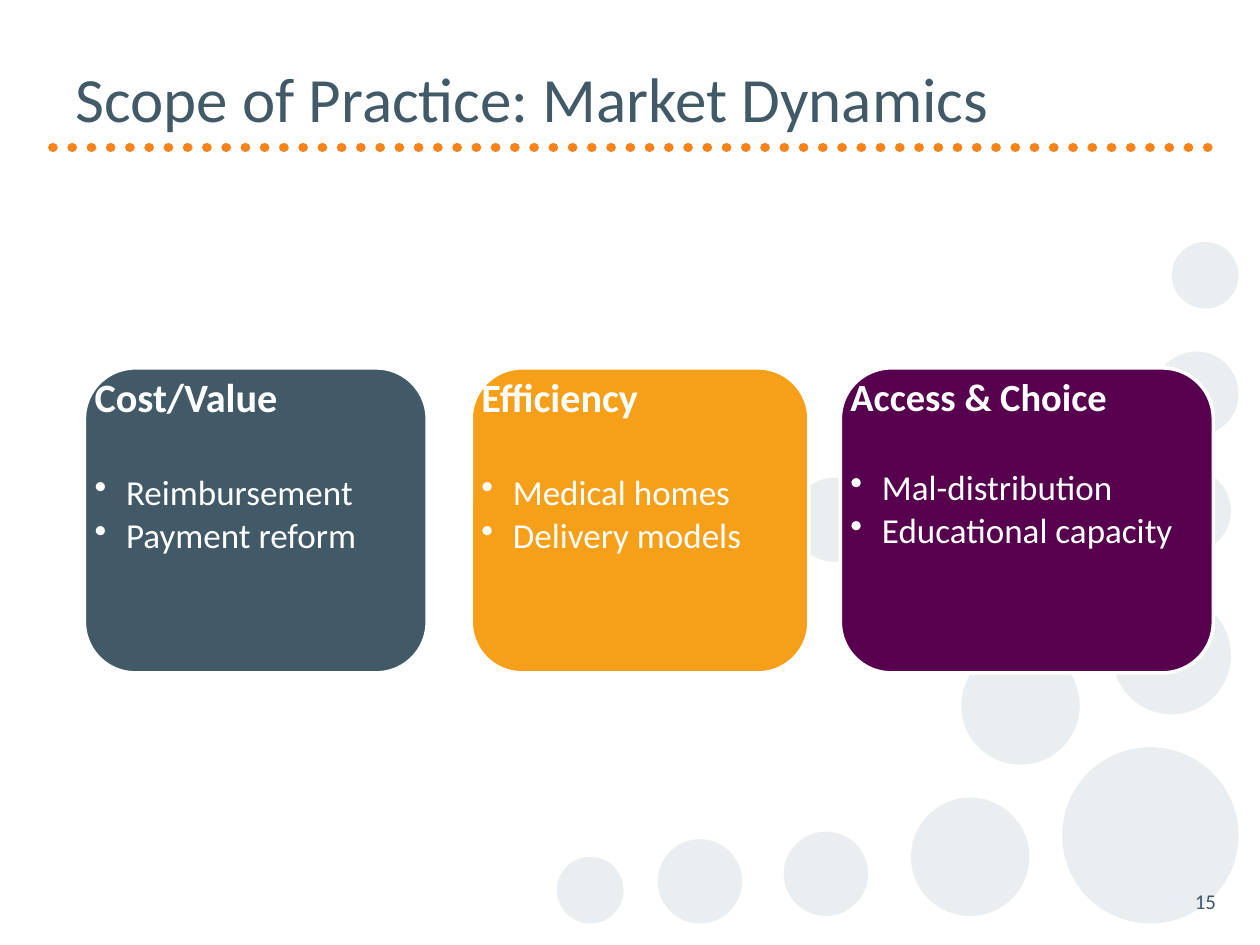
"""Build the Scope of Practice market dynamics slide."""
from lxml import etree
from pptx import Presentation
from pptx.dml.color import RGBColor
from pptx.enum.dml import MSO_LINE
from pptx.enum.shapes import MSO_CONNECTOR, MSO_SHAPE
from pptx.enum.text import MSO_ANCHOR, PP_ALIGN
from pptx.oxml.ns import qn
from pptx.util import Inches, Pt

ELLIPSE, ROUNDED = MSO_SHAPE.OVAL, MSO_SHAPE.ROUNDED_RECTANGLE
STRAIGHT, DOTTED = MSO_CONNECTOR.STRAIGHT, MSO_LINE.ROUND_DOT
TOP, MIDDLE = MSO_ANCHOR.TOP, MSO_ANCHOR.MIDDLE
LEFT, RIGHT = PP_ALIGN.LEFT, PP_ALIGN.RIGHT

THEME = {
    "font": "Calibri",
    "slate": RGBColor.from_string("425968"),
    "bubble": RGBColor.from_string("4E697A"),
    "dots": RGBColor.from_string("F7831A"),
    "amber": RGBColor.from_string("F6A01A"),
    "plum": RGBColor.from_string("56004E"),
    "white": RGBColor.from_string("FFFFFF"),
    "title": Pt(36),
    "number": Pt(12),
    "bullet": Pt(20),
}


def add_text_frame(left, top, width, height, anchor, inset_x, inset_y):
    box = slide.shapes.add_textbox(Inches(left), Inches(top), Inches(width), Inches(height))
    frame = box.text_frame
    settings = {
        "word_wrap": True, "vertical_anchor": anchor,
        "margin_left": Inches(inset_x), "margin_right": Inches(inset_x),
        "margin_top": Inches(inset_y), "margin_bottom": Inches(inset_y),
    }
    for name, value in settings.items():
        setattr(frame, name, value)
    return frame


def write(paragraph, text, size, color, bold=False, **layout):
    run = paragraph.add_run()
    run.text = text
    for name, value in {"name": THEME["font"], "size": size, "bold": bold}.items():
        setattr(run.font, name, value)
    run.font.color.rgb = color
    for name, value in layout.items():
        setattr(paragraph, name, value)


prs = Presentation()
prs.slide_width, prs.slide_height = Inches(10), Inches(7.5)
slide = prs.slides.add_slide(prs.slide_layouts[6])

bubbles = [
    (8.43, 5.93, 1.4), (8.83, 4.73, 0.94), (7.63, 5.13, 0.94), (7.23, 6.33, 0.94),
    (9.1, 3.72, 0.67), (6.22, 6.6, 0.67), (9.16, 2.79, 0.67), (6.29, 3.79, 0.67),
    (5.22, 6.66, 0.67), (9.3, 1.92, 0.53), (4.42, 6.8, 0.53),
]
for left, top, diameter in bubbles:
    bubble = slide.shapes.add_shape(
        ELLIPSE, Inches(left), Inches(top), Inches(diameter), Inches(diameter))
    bubble.shadow.inherit = False
    bubble.line.fill.background()
    bubble.fill.solid()
    bubble.fill.fore_color.rgb = THEME["bubble"]
    tint = bubble.fill._xPr.find(qn("a:solidFill"))[0]
    etree.SubElement(tint, qn("a:alpha"), val="11000")

divider = slide.shapes.add_connector(
    STRAIGHT, Inches(0.42), Inches(1.17), Inches(9.67), Inches(1.17))
divider.line.color.rgb = THEME["dots"]
divider.line.width = Pt(5.5)
divider.line.dash_style = DOTTED
divider_properties = divider._element.spPr
divider_properties.find(qn("a:ln")).set("cap", "rnd")
etree.SubElement(divider_properties, qn("a:effectLst"))

heading = add_text_frame(0.5, 0.3, 9, 0.95, MIDDLE, 0.1, 0.05)
write(heading.paragraphs[0], "Scope of Practice: Market Dynamics",
      THEME["title"], THEME["slate"], alignment=LEFT)
page_number = add_text_frame(7.42, 6.95, 2.33, 0.4, MIDDLE, 0.1, 0.05)
write(page_number.paragraphs[0], "15", THEME["number"], THEME["slate"], alignment=RIGHT)

card_top, card_height = 2.92, 2.42
cards = [
    (0.67, 2.72, "slate", 23, 30.5, "Cost/Value", ["Reimbursement", "Payment reform"]),
    (3.74, 2.68, "amber", 23, 30.5, "Efficiency", ["Medical homes", "Delivery models"]),
    (6.67, 2.96, "plum", 22, 29, "Access & Choice", ["Mal-distribution", "Educational capacity"]),
]
for left, width, color, topic_size, topic_gap, topic, points in cards:
    card = slide.shapes.add_shape(
        ROUNDED, Inches(left), Inches(card_top), Inches(width), Inches(card_height))
    card.shadow.inherit = False
    card.fill.solid()
    card.fill.fore_color.rgb = THEME[color]
    card.line.color.rgb = THEME["white"]
    card.line.width = Pt(2)

    content = add_text_frame(left, card_top, width, card_height, TOP, 0.08, 0.08)
    write(content.paragraphs[0], topic, Pt(topic_size), THEME["white"], bold=True,
          line_spacing=0.9, space_after=Pt(topic_gap))
    for point in points:
        item = content.add_paragraph()
        write(item, point, THEME["bullet"], THEME["white"],
              line_spacing=0.9, space_after=Pt(3))
        item_properties = item._p.get_or_add_pPr()
        item_properties.set("marL", str(Inches(0.25)))
        item_properties.set("indent", str(-Inches(0.25)))
        etree.SubElement(item_properties, qn("a:buChar"), char="•")

prs.save("out.pptx")
